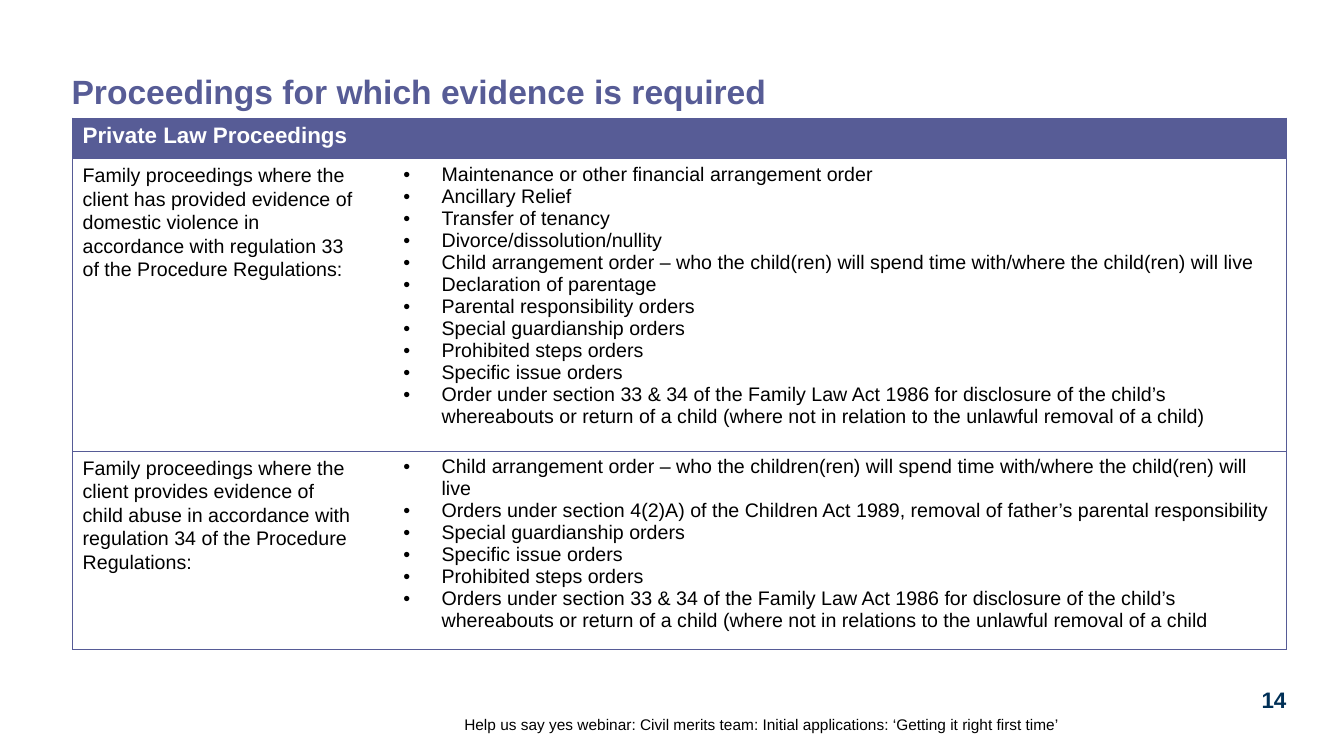
import pptx
import pptx.util
import pptx.dml.color
import pptx.enum.text
from lxml import etree
from pptx.util import Inches, Pt

COLORS = {"heading": "575C96", "border": "565B96", "number": "003057",
          "black": "000000", "white": "FFFFFF"}
A = "{http://schemas.openxmlformats.org/drawingml/2006/main}"
ALIGN = pptx.enum.text.PP_ALIGN
ANCHOR = pptx.enum.text.MSO_ANCHOR


def write(paragraph, text, size, color, bold=False):
    paragraph.text = text
    for name, value in {"name": "Arial", "size": Pt(size), "bold": bold}.items():
        setattr(paragraph.font, name, value)
    paragraph.font.color.rgb = pptx.dml.color.RGBColor.from_string(COLORS[color])


def draw_edges(cell, edges):
    """Draw the listed edges (letters from LRTB) and clear the others."""
    properties = cell._tc.get_or_add_tcPr()
    for position, edge in enumerate("LRTB"):
        line = etree.Element(A + "ln" + edge, w=str(Pt(0.5)))
        if edge in edges:
            fill = etree.SubElement(line, A + "solidFill")
            etree.SubElement(fill, A + "srgbClr", val=COLORS["border"])
        else:
            etree.SubElement(line, A + "noFill")
        properties.insert(position, line)


presentation = pptx.Presentation()
presentation.slide_width = Inches(13.33)
presentation.slide_height = Inches(7.5)
slide = presentation.slides.add_slide(presentation.slide_layouts[6])

# Title, page number and footer
captions = [
    ((0.71, 0.74, 12.04, 0.38), "Proceedings for which evidence is required",
     24, "heading", True, ALIGN.LEFT, ANCHOR.MIDDLE, 0.9),
    ((12.44, 6.81, 0.39, 0.28), "14",
     16, "number", True, ALIGN.CENTER, ANCHOR.TOP, 1.0),
    ((0.57, 6.92, 9.94, 0.36),
     "Help us say yes webinar: Civil merits team: Initial applications: ‘Getting it right first time’",
     11, "black", False, ALIGN.RIGHT, ANCHOR.BOTTOM, 1.0),
]
for place, text, size, color, bold, align, anchor, spacing in captions:
    frame = slide.shapes.add_textbox(*map(Inches, place)).text_frame
    frame.word_wrap = True
    frame.vertical_anchor = anchor
    for side in ("left", "top", "right", "bottom"):
        setattr(frame, "margin_" + side, 0)
    caption = frame.paragraphs[0]
    write(caption, text, size, color, bold)
    caption.alignment = align
    caption.line_spacing = spacing

# Table of proceedings: evidence on the left, orders on the right
proceedings = [
    ([
        "Family proceedings where the",
        "client has provided evidence of",
        "domestic violence in",
        "accordance with regulation 33",
        "of the Procedure Regulations:",
    ], [
        "Maintenance or other financial arrangement order",
        "Ancillary Relief",
        "Transfer of tenancy",
        "Divorce/dissolution/nullity",
        "Child arrangement order – who the child(ren) will spend time with/where the child(ren) will live",
        "Declaration of parentage",
        "Parental responsibility orders",
        "Special guardianship orders",
        "Prohibited steps orders",
        "Specific issue orders",
        "Order under section 33 & 34 of the Family Law Act 1986 for disclosure of the child’s "
        "whereabouts or return of a child (where not in relation to the unlawful removal of a child)",
    ]),
    ([
        "Family proceedings where the",
        "client provides evidence of",
        "child abuse in accordance with",
        "regulation 34 of the Procedure",
        "Regulations:",
    ], [
        "Child arrangement order – who the children(ren) will spend time with/where the child(ren) will live",
        "Orders under section 4(2)A) of the Children Act 1989, removal of father’s parental responsibility",
        "Special guardianship orders",
        "Specific issue orders",
        "Prohibited steps orders",
        "Orders under section 33 & 34 of the Family Law Act 1986 for disclosure of the child’s "
        "whereabouts or return of a child (where not in relations to the unlawful removal of a child",
    ]),
]
column_widths = [3.18, 8.86]
row_heights = [0.38, 2.74, 1.95]
table = slide.shapes.add_table(
    len(row_heights), len(column_widths), Inches(0.72), Inches(1.17),
    Inches(sum(column_widths)), Inches(sum(row_heights))).table
table.horz_banding = False
for column, width in zip(table.columns, column_widths):
    column.width = Inches(width)
for row, height in zip(table.rows, row_heights):
    row.height = Inches(height)

for cell, edge in zip(table.rows[0].cells, "LR"):
    cell.fill.solid()
    cell.fill.fore_color.rgb = pptx.dml.color.RGBColor.from_string(COLORS["heading"])
    draw_edges(cell, edge + "TB")
write(table.cell(0, 0).text_frame.paragraphs[0], "Private Law Proceedings", 16, "white", True)

for row_number, contents in enumerate(proceedings, start=1):
    for column_number, lines in enumerate(contents):
        cell = table.cell(row_number, column_number)
        cell.fill.background()
        draw_edges(cell, "LR"[column_number] + "TB")
        for line_number, text in enumerate(lines):
            frame = cell.text_frame
            paragraph = frame.add_paragraph() if line_number else frame.paragraphs[0]
            if column_number == 0:
                paragraph.line_spacing = 1.07
            else:
                settings = paragraph._p.get_or_add_pPr()
                settings.set("marL", str(Inches(0.38)))
                settings.set("indent", str(-Inches(0.38)))
                etree.SubElement(settings, A + "buFont", typeface="Arial")
                etree.SubElement(settings, A + "buChar", char="•")
            write(paragraph, text, 14, "black")

presentation.save("out.pptx")
